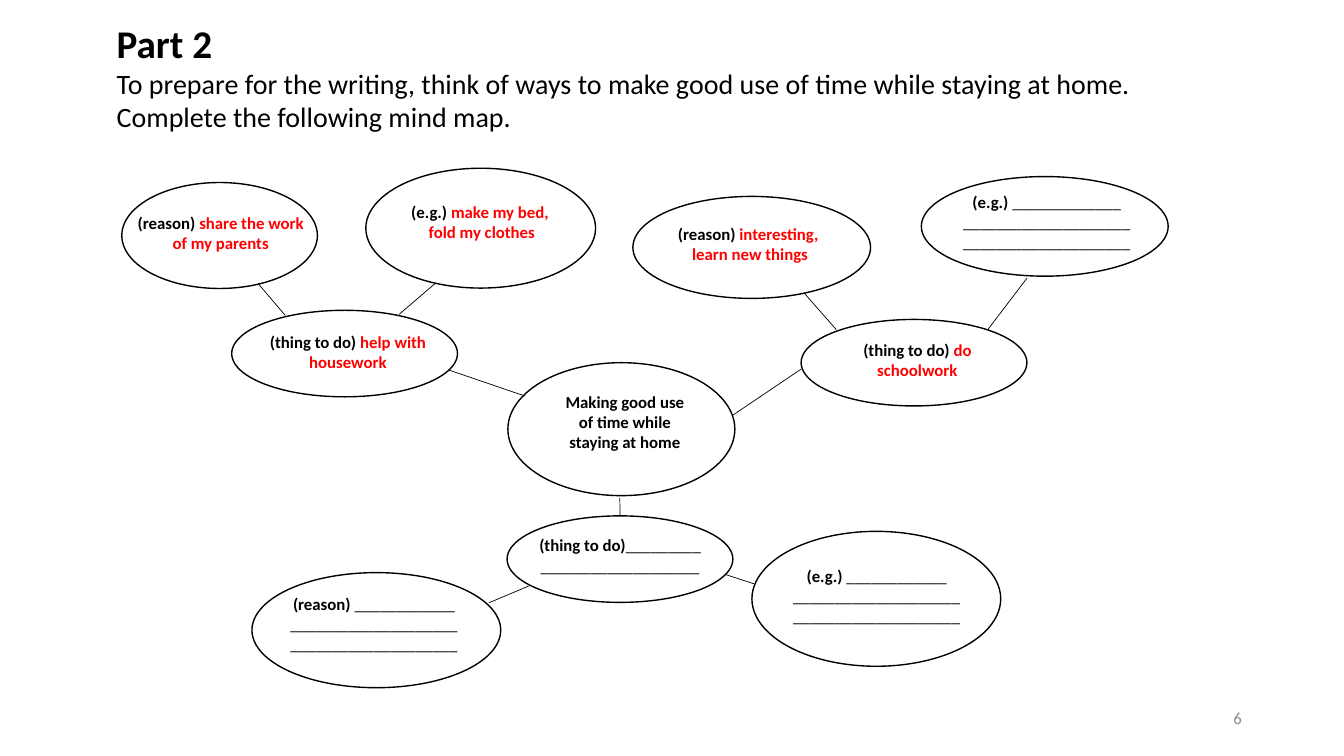
from lxml.etree import SubElement
from pptx import Presentation
from pptx.dml.color import RGBColor
from pptx.enum.shapes import MSO_CONNECTOR as Link, MSO_SHAPE as Preset
from pptx.enum.text import MSO_ANCHOR as Anchor, PP_ALIGN as Align
from pptx.oxml.ns import qn
from pptx.util import Cm, Pt

BLACK = RGBColor(0x00, 0x00, 0x00)
WHITE = RGBColor(0xFF, 0xFF, 0xFF)
RED = RGBColor(0xFF, 0x00, 0x00)
GREY = RGBColor(0x8C, 0x8C, 0x8C)

PROMPT = (12, True, BLACK)
ANSWER = (12, True, RED)
BLANK = (12, False, BLACK)
TITLE = (28, True, BLACK)
TASK = (20, False, BLACK)
NUMBER = (12, False, GREY)

LONG_BLANK = [("_" * 20, BLANK)]


def blanks(prompt, count):
    return [[(prompt, PROMPT), (" " + "_" * count, BLANK)], LONG_BLANK, LONG_BLANK]


# Each bubble: oval, label area, label lines, left indent, white label
BUBBLES = {
    "centre": ((12.8, 9.14, 5.72, 3.35), (13.82, 9.75, 3.86, 2.16),
               [[("Making good use of time while staying at home", PROMPT)]], 0, True),
    "housework": ((5.84, 7.82, 5.69, 2.18), (5.77, 8.23, 5.36, 1.52),
                  [[("(thing to do) ", PROMPT), ("help with housework", ANSWER)]], 0.64, True),
    "housework reason": ((3.07, 4.6, 4.93, 2.67), (3.1, 5.23, 4.93, 1.52),
                         [[("(reason) ", PROMPT), ("share the work of my parents", ANSWER)]],
                         0, True),
    "housework example": ((9.22, 4.24, 5.79, 3.02), (9.25, 4.95, 5.79, 1.45),
                          [[("(e.g.) ", PROMPT), ("make my bed, ", ANSWER)],
                           [("fold my clothes", ANSWER)]], 0, True),
    "schoolwork": ((20.19, 8.05, 5.69, 2.18), (20.12, 8.43, 5.36, 1.52),
                   [[("(thing to do) ", PROMPT), ("do schoolwork", ANSWER)]], 0.64, True),
    "schoolwork reason": ((15.95, 4.95, 5.99, 2.57), (16.38, 5.51, 5.05, 1.63),
                          [[("(reason) ", PROMPT), ("interesting, ", ANSWER)],
                           [("learn new things", ANSWER)]], 0, False),
    "schoolwork example": ((23.22, 4.45, 6.22, 2.51), (23.27, 4.7, 6.22, 2.41),
                           blanks("(e.g.)", 13), 0, False),
    "open thing": ((12.78, 13, 5.69, 2.18), (12.95, 13.36, 5.36, 1.52),
                   [[("(thing to do)", PROMPT), ("_" * 9, BLANK)], [("_" * 19, BLANK)]], 0, True),
    "open reason": ((6.35, 14.43, 6.27, 2.9), (6.96, 14.83, 4.93, 2.06),
                    blanks("(reason)", 12), 0, True),
    "open example": ((18.95, 13.39, 6.27, 3.4), (19.63, 14.12, 4.93, 2.57),
                     blanks("(e.g.)", 12), 0, True),
}

LINKS = [
    (20.27, 7.39, 21.08, 8.31),
    (6.5, 7.14, 7.19, 7.95),
    (10.97, 7.14, 10.06, 7.92),
    (24.89, 8.31, 25.88, 7.01),
    (11.3, 9.32, 13.23, 9.98),
    (20.19, 9.3, 18.47, 10.46),
    (12.32, 15.19, 13.34, 14.76),
    (18.29, 14.48, 19, 14.71),
]
CENTRE_LINK = (15.62, 12.55, 15.62, 13)


class MindMap:
    """Draws the texts, bubbles and links of a mind map on one slide."""

    font = "Calibri"

    def __init__(self, slide):
        self.shapes = slide.shapes

    def fill_text(self, shape, lines, align, indent=0, anchor=Anchor.TOP):
        frame = shape.text_frame
        frame.word_wrap = True
        frame.vertical_anchor = anchor
        for index, line in enumerate(lines):
            para = frame.add_paragraph() if index else frame.paragraphs[0]
            para.alignment = align
            if indent:
                para._p.get_or_add_pPr().set("marL", str(Cm(indent)))
            for text, (size, bold, color) in line:
                span = para.add_run()
                span.text = text
                span.font.name = self.font
                span.font.size = Pt(size)
                span.font.bold = bold
                span.font.color.rgb = color

    def text(self, area, lines, align, indent=0, anchor=Anchor.TOP):
        box = self.shapes.add_textbox(*map(Cm, area))
        self.fill_text(box, lines, align, indent, anchor)

    def label(self, area, lines, indent):
        panel = self.shapes.add_shape(Preset.RECTANGLE, *map(Cm, area))
        panel.shadow.inherit = False
        panel.fill.solid()
        panel.fill.fore_color.rgb = WHITE
        panel.line.fill.background()
        self.fill_text(panel, lines, Align.CENTER, indent)

    def bubble(self, oval_area, label_area, lines, indent, white):
        if white:
            self.label(label_area, lines, indent)
        else:
            self.text(label_area, lines, Align.CENTER, indent)
        oval = self.shapes.add_shape(Preset.OVAL, *map(Cm, oval_area))
        oval.shadow.inherit = False
        oval.fill.background()
        oval.line.color.rgb = BLACK
        oval.line.width = Pt(1)
        return oval

    def link(self, ends):
        line = self.shapes.add_connector(Link.STRAIGHT, *map(Cm, ends))
        line.line.color.rgb = BLACK
        line.line.width = Pt(0.5)
        SubElement(line._element.spPr, qn("a:effectLst"))
        return line


def main():
    deck = Presentation()
    deck.slide_width, deck.slide_height = Cm(33.87), Cm(19.05)
    page = MindMap(deck.slides.add_slide(deck.slide_layouts[6]))
    page.text((23.93, 17.58, 7.62, 1.02), [[("6", NUMBER)]], Align.RIGHT, anchor=Anchor.MIDDLE)
    page.text((2.69, 0.36, 28.8, 3.18), [
        [("Part 2", TITLE)],
        [("To prepare for the writing, think of ways to make good use of time while "
          "staying at home. Complete the following mind map.", TASK)],
    ], Align.LEFT)
    ovals = {name: page.bubble(*bubble) for name, bubble in BUBBLES.items()}
    for ends in LINKS:
        page.link(ends)
    page.link(CENTRE_LINK).end_connect(ovals["open thing"], 0)
    deck.save("out.pptx")


if __name__ == "__main__":
    main()
